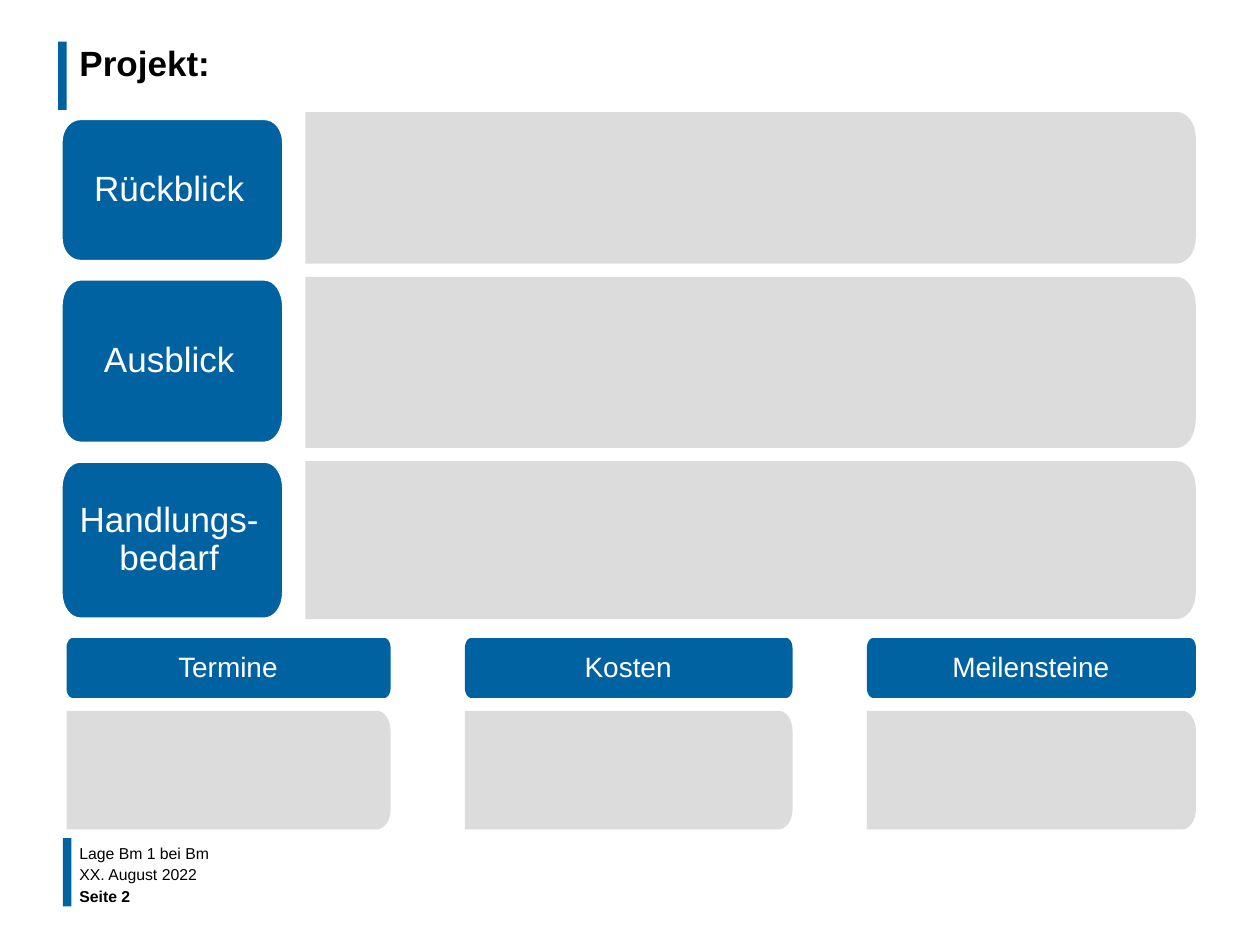
from math import cos, pi, sin

from lxml import etree
from pptx import Presentation
from pptx.dml.color import RGBColor
from pptx.enum import shapes, text
from pptx.oxml.ns import qn
from pptx.util import Pt

BLUE = RGBColor(0x00, 0x62, 0xA1)
GREY = RGBColor(0xD9, 0xD9, 0xD9)
WHITE = RGBColor(0xFF, 0xFF, 0xFF)
BLACK = RGBColor(0x00, 0x00, 0x00)
FONT = "Arial"
STEPS = 8  # points per rounded corner


def style(para, size, color, bold=False):
    font = para.font
    font.name, font.size, font.bold = FONT, Pt(size), bold
    font.color.rgb = color


def inset(frame, left, top, right, bottom):
    frame.margin_left, frame.margin_top = Pt(left), Pt(top)
    frame.margin_right, frame.margin_bottom = Pt(right), Pt(bottom)
    frame.word_wrap = True


def arc(x, y, rx, ry, start):
    """Points of a quarter ellipse around x, y, clockwise from start."""
    turns = [start + pi / 2 * i / STEPS for i in range(STEPS + 1)]
    return [(Pt(x + rx * cos(t)), Pt(y + ry * sin(t))) for t in turns]


def plate(slide, box, rx, color, left_round):
    """Plate with rounded right corners, and left ones if asked."""
    x, y, w, h = box
    ry = h / 6
    lx = rx if left_round else 0
    ly = ry if left_round else 0
    dots = arc(x + w - rx, y + ry, rx, ry, -pi / 2)
    dots += arc(x + w - rx, y + h - ry, rx, ry, 0)
    if left_round:
        dots += arc(x + lx, y + h - ly, lx, ly, pi / 2)
        dots += arc(x + lx, y + ly, lx, ly, pi)
    else:
        dots += [(Pt(x), Pt(y + h)), (Pt(x), Pt(y))]
    form = slide.shapes.build_freeform(*dots[0])
    form.add_line_segments(dots[1:], close=True)
    shape = form.convert_to_shape()
    shape.shadow.inherit = False
    shape.fill.solid()
    shape.fill.fore_color.rgb = color
    shape.line.fill.background()
    return shape


def panel(slide, box, rx):
    shape = plate(slide, box, rx, GREY, False)
    tone = shape.fill._xPr.find(qn("a:solidFill"))[0]
    etree.SubElement(tone, qn("a:alpha")).set("val", "90000")


def label(slide, box, rx, words, size, margins):
    shape = plate(slide, box, rx, BLUE, True)
    frame = shape.text_frame
    inset(frame, *margins)
    frame.vertical_anchor = text.MSO_ANCHOR.MIDDLE
    frame.text = words
    para = frame.paragraphs[0]
    para.alignment = text.PP_ALIGN.CENTER
    para.line_spacing = 0.9
    style(para, size, WHITE)
    return shape


def bar(slide, x, y):
    shape = slide.shapes.add_shape(
        shapes.MSO_SHAPE.RECTANGLE, Pt(x), Pt(y), Pt(5), Pt(39))
    shape.shadow.inherit = False
    shape.fill.solid()
    shape.fill.fore_color.rgb = BLUE
    shape.line.fill.background()


def header(slide, box, words):
    x, y, w, h = box
    bar(slide, x - 5, y)
    title = slide.shapes.title
    title.left, title.top, title.width, title.height = map(Pt, box)
    frame = title.text_frame
    inset(frame, 7.2, 3.6, 7.2, 3.6)
    frame.vertical_anchor = text.MSO_ANCHOR.TOP
    frame.text = words
    para = frame.paragraphs[0]
    para.alignment = text.PP_ALIGN.LEFT
    para.line_spacing = Pt(20.4)
    style(para, 20, BLACK, True)


def row(slide, box, head, words):
    """Grey panel to the right of a label; head is the label's top and height."""
    x, y, w, h = box
    top, tall = head
    panel(slide, (x + 139.7, y, w - 139.7, h), 11)
    shape = label(slide, (x, top, 127.4, tall), 11, words, 20,
                  (5.8, 6.5, 9.4, 6.5))
    shape.line.color.rgb = WHITE
    shape.line.width = Pt(2)


def column(slide, box, words):
    x, y, w, h = box
    panel(slide, (x, y + 41.6, w, h - 41.6), 8)
    label(slide, (x, y, w, 34.2), 3.6, words, 16, (5.8, 4.3, 6.5, 4.3))


def footer(slide, box, lines):
    x, y, w, h = box
    bar(slide, x - 3, y - 2)
    step = h / len(lines)
    for i, words in enumerate(lines):
        field = slide.shapes.add_textbox(
            Pt(x), Pt(y + i * step), Pt(w), Pt(13))
        frame = field.text_frame
        inset(frame, 6.5, 2.9, 6.5, 2.9)
        frame.vertical_anchor = text.MSO_ANCHOR.MIDDLE
        frame.text = words
        style(frame.paragraphs[0], 9, BLACK, i == len(lines) - 1)


def main():
    deck = Presentation()
    deck.slide_width, deck.slide_height = Pt(720), Pt(540)
    slide = deck.slides.add_slide(deck.slide_layouts[5])

    header(slide, (38.2, 23.8, 638.6, 23.8), "Projekt:")
    for y, h, head, words in [
        (64, 86.6, (67.7, 81.8), "Rückblick"),
        (158.2, 97.8, (159.4, 93.9), "Ausblick"),
        (263.5, 90.3, (263.5, 90.3), "Handlungs-bedarf"),
    ]:
        row(slide, (34.8, y, 648.5, h), head, words)
    for x, w, words in [
        (38, 185.2, "Termine"),
        (265.7, 187.2, "Kosten"),
        (495.4, 188, "Meilensteine"),
    ]:
        column(slide, (x, 364.6, w, 109.4), words)
    footer(slide, (38.9, 481, 170, 36.6),
           ["Lage Bm 1 bei Bm", "XX. August 2022", "Seite 2"])
    deck.save("out.pptx")


if __name__ == "__main__":
    main()
